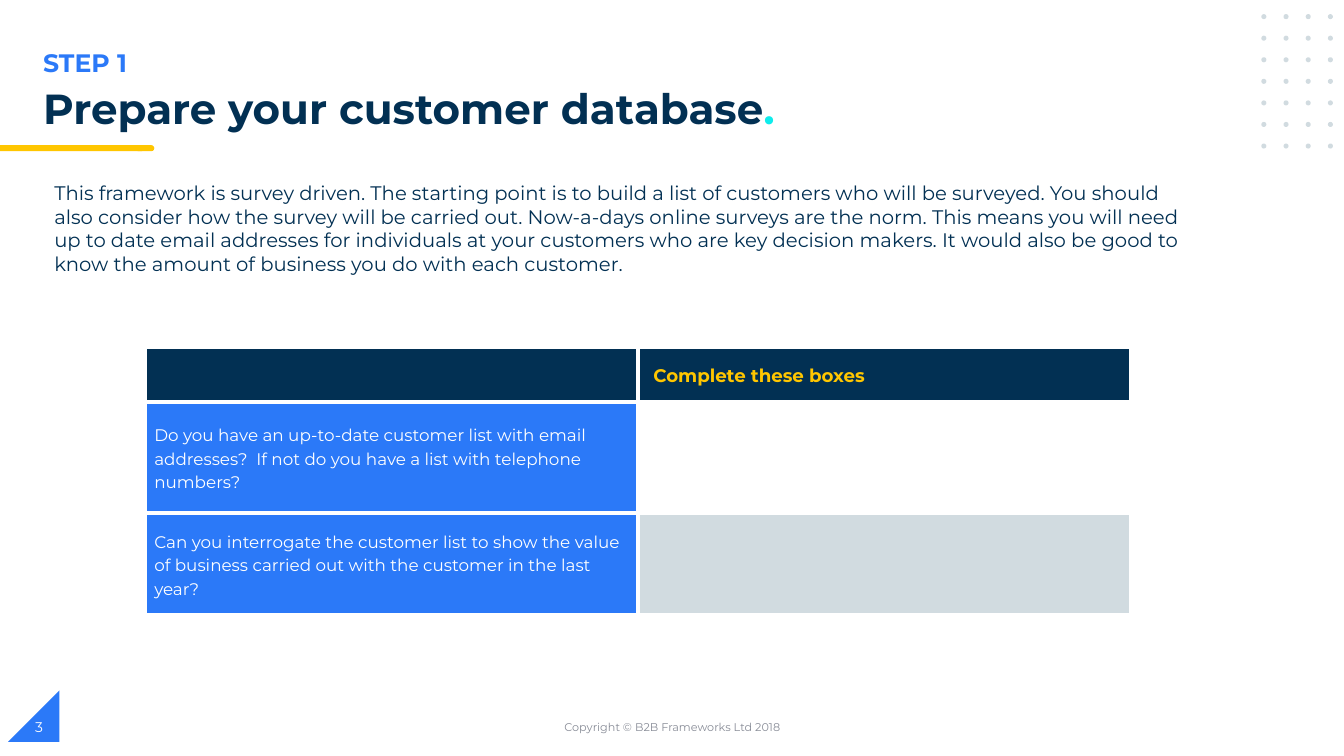
from lxml import etree
from pptx import Presentation
from pptx.dml.color import RGBColor
from pptx.enum.shapes import MSO_SHAPE
from pptx.enum.text import MSO_ANCHOR, PP_ALIGN
from pptx.oxml.ns import qn
from pptx.util import Inches, Pt

NAVY = RGBColor(0x02, 0x30, 0x53)
BLUE = RGBColor(0x2B, 0x79, 0xF8)
YELLOW = RGBColor(0xFF, 0xC6, 0x00)
CYAN = RGBColor(0x0E, 0xEC, 0xEC)
PALE = RGBColor(0xD1, 0xDB, 0xE0)
GREY = RGBColor(0x88, 0x8C, 0x97)
WHITE = RGBColor(0xFF, 0xFF, 0xFF)
FONT = "Montserrat"

INTRO = (
    "This framework is survey driven. The starting point is to build a list of "
    "customers who will be surveyed. You should also consider how the survey will "
    "be carried out. Now-a-days online surveys are the norm. This means you will "
    "need up to date email addresses for individuals at your customers who are key "
    "decision makers. It would also be good to know the amount of business you do "
    "with each customer."
)
QUESTIONS = [
    "Do you have an up-to-date customer list with email addresses?  If not do you "
    "have a list with telephone numbers?",
    "Can you interrogate the customer list to show the value of business carried "
    "out with the customer in the last year?",
]


def write(frame, words, size, color, bold=False, align=PP_ALIGN.LEFT, spacing=None):
    """Fill the first paragraph of a frame and return it."""
    paragraph = frame.paragraphs[0]
    paragraph.alignment = align
    if spacing:
        paragraph.line_spacing = spacing
    add_run(paragraph, words, size, color, bold)
    return paragraph


def add_run(paragraph, words, size, color, bold=False):
    run = paragraph.add_run()
    run.text = words
    run.font.name = FONT
    run.font.size = Pt(size)
    run.font.bold = bold
    run.font.color.rgb = color


def add_text(slide, place, words, size, color, anchor=MSO_ANCHOR.TOP, **style):
    box = slide.shapes.add_textbox(*map(Inches, place))
    box.text_frame.word_wrap = True
    box.text_frame.vertical_anchor = anchor
    return write(box.text_frame, words, size, color, **style)


def add_block(slide, preset, place, color):
    block = slide.shapes.add_shape(preset, *map(Inches, place))
    block.shadow.inherit = False
    block.fill.solid()
    block.fill.fore_color.rgb = color
    block.line.fill.background()
    return block


def add_dot_grid(slide, left, top, columns, rows):
    for row in range(rows):
        for column in range(columns):
            place = (left + 0.22 * column, top + 0.214 * row, 0.05, 0.05)
            add_block(slide, MSO_SHAPE.OVAL, place, PALE)


def style_cell(cell, color):
    """White 3 pt borders, then the fill, which must follow them in the XML."""
    properties = cell._tc.get_or_add_tcPr()
    for side in ("a:lnL", "a:lnR", "a:lnT", "a:lnB"):
        border = etree.SubElement(properties, qn(side), w=str(Pt(3)))
        fill = etree.SubElement(border, qn("a:solidFill"))
        etree.SubElement(fill, qn("a:srgbClr"), val=str(WHITE))
    cell.fill.solid()
    cell.fill.fore_color.rgb = color
    cell.vertical_anchor = MSO_ANCHOR.MIDDLE
    cell.margin_left = cell.margin_right = Inches(0.09)
    cell.margin_top = cell.margin_bottom = 0


def add_checklist(slide):
    heights = [0.55, 1.1, 1.01]
    fills = [(NAVY, NAVY), (BLUE, WHITE), (BLUE, PALE)]
    checklist = slide.shapes.add_table(
        len(heights), 2, Inches(1.44), Inches(3.44), Inches(9.78), Inches(sum(heights))
    ).table
    checklist.first_row = checklist.horz_banding = False
    for column in checklist.columns:
        column.width = Inches(4.89)
    for index, (height, row_fills) in enumerate(zip(heights, fills)):
        checklist.rows[index].height = Inches(height)
        for column, color in enumerate(row_fills):
            style_cell(checklist.cell(index, column), color)

    header = checklist.cell(0, 1)
    header.margin_left = Inches(0.15)
    write(header.text_frame, "Complete these boxes", 13, YELLOW, bold=True, spacing=1.15)
    for index, question in enumerate(QUESTIONS, start=1):
        write(checklist.cell(index, 0).text_frame, question, 12, WHITE, spacing=1.15)


def main():
    deck = Presentation()
    deck.slide_width, deck.slide_height = Inches(13.33), Inches(7.5)
    slide = deck.slides.add_slide(deck.slide_layouts[6])

    # Decoration: page corner, heading underline, dots
    corner = add_block(slide, MSO_SHAPE.RIGHT_TRIANGLE, (0.08, 6.85, 0.51, 0.51), BLUE)
    corner._element.spPr.find(qn("a:xfrm")).set("flipH", "1")
    add_block(slide, MSO_SHAPE.FLOWCHART_TERMINATOR, (1.34, 1.44, 0.19, 0.06), YELLOW)
    add_block(slide, MSO_SHAPE.RECTANGLE, (0, 1.44, 1.41, 0.06), YELLOW)
    add_dot_grid(slide, 12.51, 0.14, columns=4, rows=7)

    # Heading
    add_text(slide, (0.33, 0.42, 6.69, 0.4), "STEP 1", 18, BLUE, bold=True)
    title = add_text(slide, (0.33, 0.83, 9.27, 0.4), "Prepare your customer database",
                     30, NAVY, bold=True, spacing=0.9)
    add_run(title, ".", 30, CYAN, bold=True)

    # Body
    add_text(slide, (0.44, 1.75, 11.5, 1.04), INTRO, 14, NAVY)
    add_checklist(slide)

    # Footer
    add_text(slide, (4.42, 7.01, 4.5, 0.4), "Copyright © B2B Frameworks Ltd 2018", 8, GREY,
             anchor=MSO_ANCHOR.MIDDLE, align=PP_ALIGN.CENTER)
    add_text(slide, (0.25, 7.01, 3, 0.4), "3", 10, WHITE, anchor=MSO_ANCHOR.MIDDLE)

    deck.save("out.pptx")


if __name__ == "__main__":
    main()
